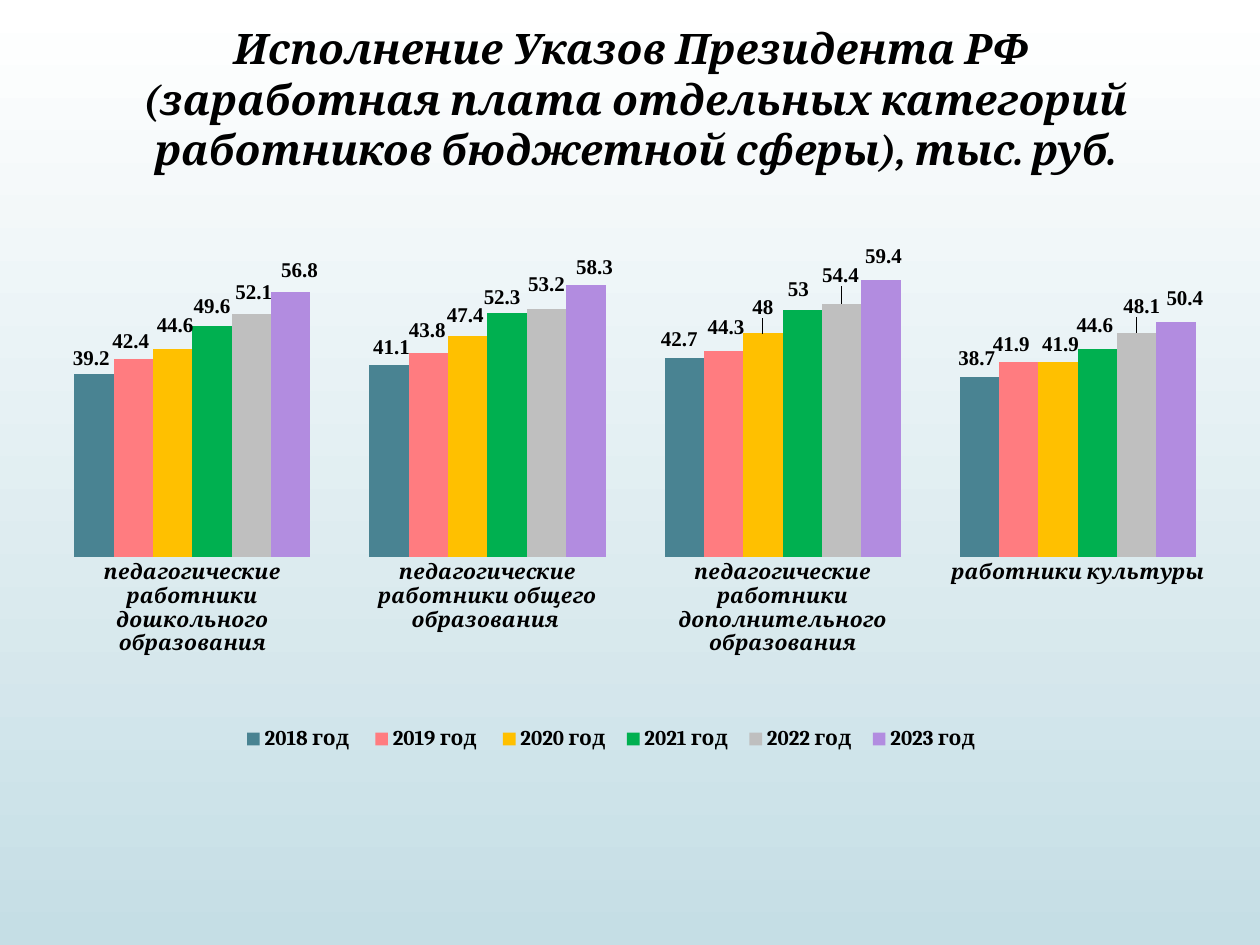
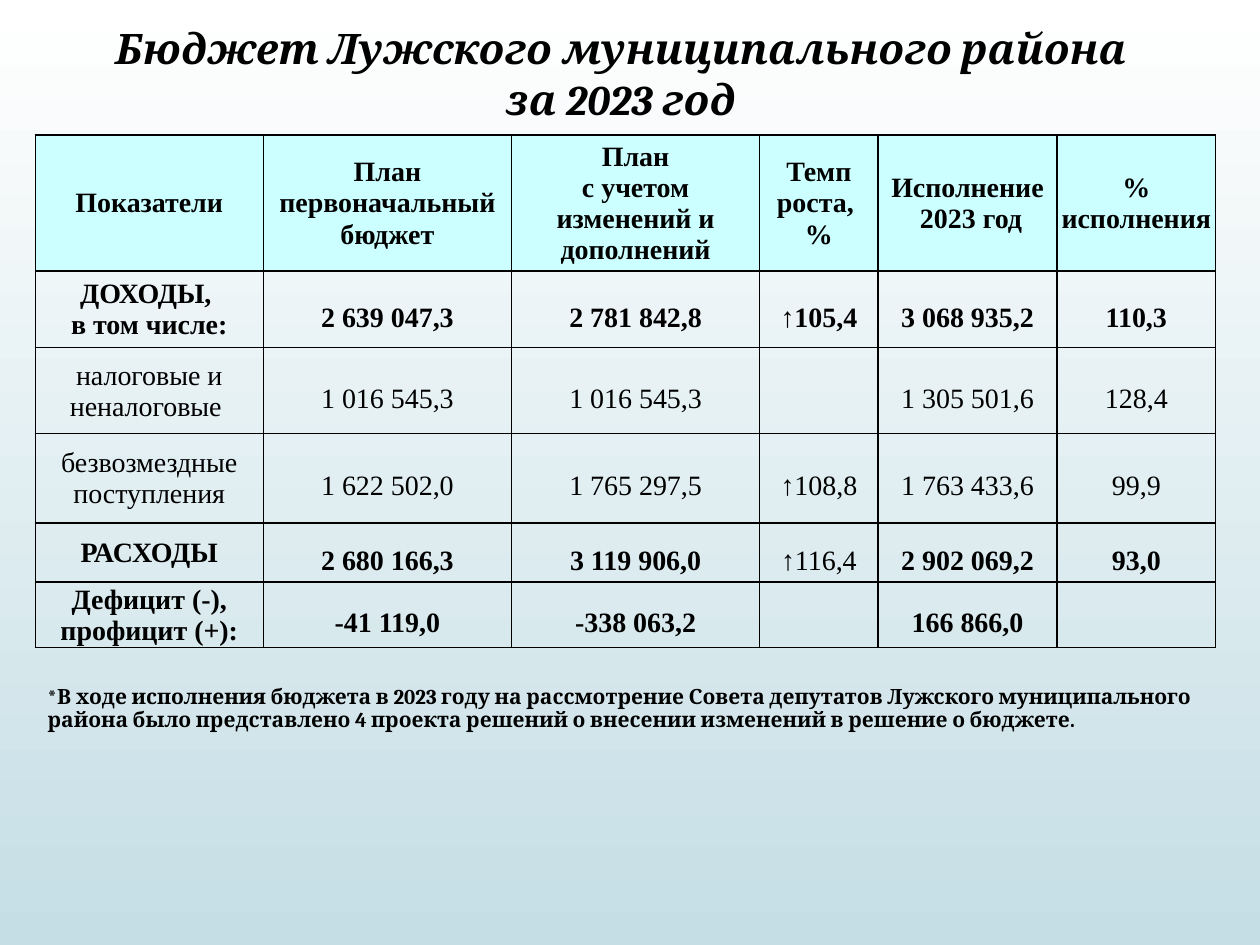
from lxml import etree
from pptx import Presentation
from pptx import util as u
from pptx.chart.data import CategoryChartData
from pptx.dml.color import RGBColor
from pptx.enum import chart as ce
from pptx.enum import text
from pptx.oxml import parse_xml
from pptx.oxml.ns import nsdecls, qn

COLORS = {"black": "000000", "top": "FFFFFF", "bottom": "C5DEE5", "header": "CCFFFF"}
SERIF, TABLE_FONT = "Cambria", "Times New Roman"


def style(font, size, name, bold=True, italic=False):
    font.size, font.name = u.Pt(size), name
    font.bold, font.italic = bold, italic
    font.color.rgb = RGBColor.from_string(COLORS["black"])


def place(parent, index, **values):
    for old in parent.findall(qn("c:layout")):
        parent.remove(old)
    layout = etree.Element(qn("c:layout"))
    manual = etree.SubElement(layout, qn("c:manualLayout"))
    for tag, value in values.items():
        etree.SubElement(manual, qn("c:" + tag)).set("val", str(value))
    parent.insert(index, layout)


prs = Presentation()
prs.slide_width, prs.slide_height = u.Inches(10), u.Inches(7.5)
fill = prs.slide_master.background.fill
fill.gradient()
fill.gradient_angle = 270
for stop, key in zip(fill.gradient_stops, ("top", "bottom")):
    stop.color.rgb = RGBColor.from_string(COLORS[key])

titles = [
    ("Исполнение Указов Президента РФ \n(заработная плата отдельных категорий "
     "работников бюджетной сферы), тыс. руб.", 9.69, 1.31),
    ("Бюджет Лужского муниципального района \nза 2023 год ", 9.53, 0.91),
]
slides = []
for title, width, height in titles:
    s = prs.slides.add_slide(prs.slide_layouts[5])
    sp = s.shapes.title
    sp.left, sp.top = u.Inches(0.2), u.Inches(0.13)
    sp.width, sp.height = u.Inches(width), u.Inches(height)
    tf = sp.text_frame
    tf.text = title
    tf.auto_size = text.MSO_AUTO_SIZE.NONE
    tf.vertical_anchor = text.MSO_ANCHOR.TOP
    for p in tf.paragraphs:
        p.alignment = text.PP_ALIGN.CENTER
        style(p.font, 24, SERIF, italic=True)
    slides.append(s)
salary_slide, budget_slide = slides

salaries = [
    ("2018 год ", "498392", (39.2, 41.1, 42.7, 38.7)),
    ("2019 год ", "FF7C80", (42.4, 43.8, 44.3, 41.9)),
    ("2020 год", "FFC000", (44.6, 47.4, 48, 41.9)),
    ("2021 год", "00B050", (49.6, 52.3, 53, 44.6)),
    ("2022 год", "BFBFBF", (52.1, 53.2, 54.4, 48.1)),
    ("2023 год", "B28CE0", (56.8, 58.3, 59.4, 50.4)),
]
label_shifts = [
    [(-0.02, 0), (0.02, -0.02), (-0.04, -0.02), (-0.02, -0.02)],
    [(-0.02, -0.02), (-0.01, -0.05), (0.02, -0.06), (-0.06, -0.01)],
    [(0.02, -0.06), (-0.02, -0.04), (0, -0.08), (0.02, -0.01)],
    [(0, -0.03), (-0.04, 0), (-0.03, -0.04), (-0.02, -0.06)],
    [(0.02, -0.05), (0, -0.07), (-0.01, -0.1), (0.04, -0.08)],
    [(0.07, -0.05), (0.07, -0.02), (0.02, -0.06), (0.07, -0.06)],
]
data = CategoryChartData()
data.categories = [
    "педагогические работники дошкольного образования",
    "педагогические работники общего образования ",
    "педагогические работники дополнительного образования",
    "работники культуры",
]
for name, color, values in salaries:
    data.add_series(name, values)
chart_width, chart_height = 9.69, 5.34
chart = salary_slide.shapes.add_chart(
    ce.XL_CHART_TYPE.COLUMN_CLUSTERED, u.Inches(0.2), u.Inches(1.62),
    u.Inches(chart_width), u.Inches(chart_height), data).chart
chart.has_title = False
style(chart.font, 12, SERIF)
chart.has_legend = True
legend = chart.legend
legend.position = ce.XL_LEGEND_POSITION.BOTTOM
legend.include_in_layout = False
style(legend.font, 12, SERIF)
place(legend._element, 1, xMode="edge", yMode="edge", x=0.17, y=0.77, w=0.62, h=0.05)
place(chart._chartSpace.chart.plotArea, 0, layoutTarget="inner", xMode="edge",
      yMode="edge", x=0.016, y=0.04, w=0.967, h=0.484)

axis = chart.category_axis
axis.major_tick_mark = ce.XL_TICK_MARK.NONE
axis.format.line.fill.background()
style(axis.tick_labels.font, 12, SERIF, italic=True)
axis = chart.value_axis
axis.minimum_scale, axis.maximum_scale = 0, 70
axis.has_major_gridlines = False
axis.visible = False

plot = chart.plots[0]
plot.gap_width, plot.overlap = 150, 0
plot.vary_by_categories = False
for series, (name, color, values), shifts in zip(plot.series, salaries, label_shifts):
    series.format.fill.solid()
    series.format.fill.fore_color.rgb = RGBColor.from_string(color)
    series.data_labels.show_value = True
    style(series.data_labels.font, 12, TABLE_FONT)
    for i in range(len(values)):
        label = series.points[i].data_label
        style(label.font, 12, TABLE_FONT)
        label.position = ce.XL_LABEL_POSITION.OUTSIDE_END
    for label_xml, (dx, dy) in zip(series._element.iter(qn("c:dLbl")), shifts):
        place(label_xml, 1, x=round(dx / chart_width, 4), y=round(dy / chart_height, 4))

rows = [
    ["Показатели", "План\nпервоначальный бюджет", "План\nс учетом изменений и дополнений",
     "Темп роста, \n%", "Исполнение\n 2023 год", "%\nисполнения"],
    ["ДОХОДЫ, \nв том числе:", "2 639 047,3", "2 781 842,8", "↑105,4", "3 068 935,2", "110,3"],
    ["налоговые и неналоговые ", "1 016 545,3", "1 016 545,3", "", "1 305 501,6", "128,4"],
    ["безвозмездные поступления", "1 622 502,0", "1 765 297,5", "↑108,8", "1 763 433,6", "99,9"],
    ["РАСХОДЫ", "2 680 166,3", "3 119 906,0", "↑116,4", "2 902 069,2", "93,0"],
    ["Дефицит (-), профицит (+):", "-41 119,0", "-338 063,2", "", "166 866,0", ""],
]
col_widths = [1.81, 1.97, 1.97, 0.94, 1.42, 1.26]
row_heights = [1.08, 0.61, 0.68, 0.71, 0.47, 0.52]
bold_rows = {0, 1, 4, 5}
plain_cells = {(4, 3)}
table = budget_slide.shapes.add_table(
    len(rows), len(col_widths), u.Inches(0.28), u.Inches(1.07),
    u.Inches(sum(col_widths)), u.Inches(sum(row_heights))).table
for column, width in zip(table.columns, col_widths):
    column.width = u.Inches(width)
for i, (row, height) in enumerate(zip(rows, row_heights)):
    table.rows[i].height = u.Inches(height)
    for j, value in enumerate(row):
        cell = table.cell(i, j)
        cell.vertical_anchor = text.MSO_ANCHOR.MIDDLE
        cell.margin_left = cell.margin_right = cell.margin_top = u.Inches(0.01)
        cell.margin_bottom = 0
        tc_pr = cell._tc.get_or_add_tcPr()
        for side in "LRTB":
            tc_pr.append(parse_xml(
                f'<a:ln{side} {nsdecls("a")} w="12700"><a:solidFill>'
                f'<a:srgbClr val="{COLORS["black"]}"/></a:solidFill></a:ln{side}>'))
        if i == 0:
            cell.fill.solid()
            cell.fill.fore_color.rgb = RGBColor.from_string(COLORS["header"])
        else:
            cell.fill.background()
        cell.text = value
        for p in cell.text_frame.paragraphs:
            p.alignment = text.PP_ALIGN.CENTER
            if i and j:
                p.line_spacing = 1.5
            style(p.font, 16, TABLE_FONT, bold=i in bold_rows and (i, j) not in plain_cells)

sp = budget_slide.shapes.add_textbox(u.Inches(0.28), u.Inches(5.4), u.Inches(9.4), u.Inches(0.46))
tf = sp.text_frame
tf.word_wrap = True
p = tf.paragraphs[0]
p.text = ("*В ходе исполнения бюджета в 2023 году на рассмотрение Совета депутатов Лужского "
          "муниципального района было представлено 4 проекта решений о внесении изменений "
          "в решение о бюджете.")
p.line_spacing = 0.9
style(p.font, 12, SERIF)

prs.save("out.pptx")
